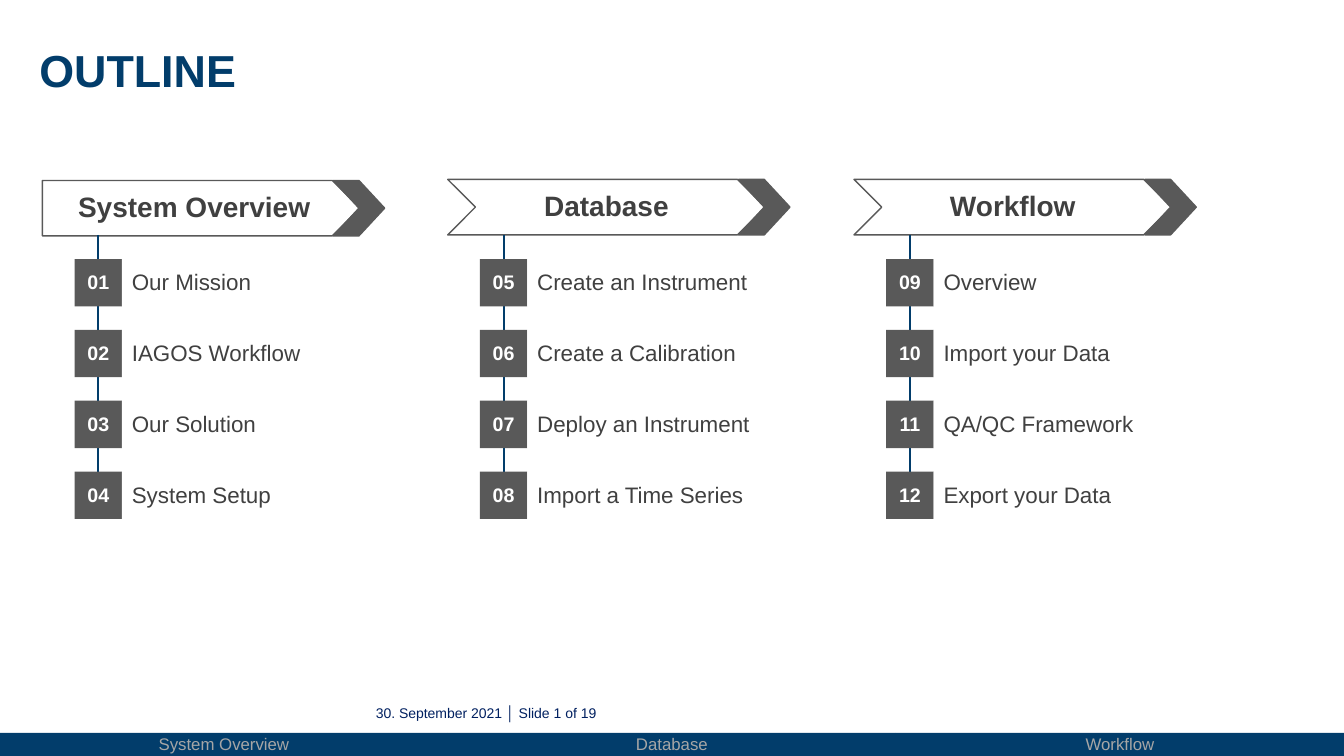
from pptx import Presentation
from pptx.dml.color import RGBColor
from pptx.enum.shapes import MSO_CONNECTOR, MSO_SHAPE as Shape
from pptx.enum.text import MSO_ANCHOR as Anchor, PP_ALIGN as Align
from pptx.oxml.ns import qn
from pptx.util import Inches, Pt

COLORS = {
    "navy": "023D6B",
    "gray": "595959",
    "text": "404040",
    "white": "FFFFFF",
    "footer": "A6A6A6",
    "date": "002060",
}


def color(name):
    return RGBColor.from_string(COLORS[name])


def add_text(left, top, width, height, text="", *, kind=None, fill=None, line=None,
             size=16, font_color="text", bold=False, align=Align.CENTER,
             anchor=Anchor.MIDDLE, spacing=0.95, margin=None):
    """Add a preset shape, or a text box when kind is None, holding one paragraph."""
    box = [Inches(n) for n in (left, top, width, height)]
    if kind is None:
        shape = slide.shapes.add_textbox(*box)
    else:
        shape = slide.shapes.add_shape(kind, *box)
        shape.shadow.inherit = False
        shape.fill.solid()
        shape.fill.fore_color.rgb = color(fill)
        if line:
            shape.line.color.rgb = color(line)
            shape.line.width = Pt(1)
        else:
            shape.line.fill.background()
    frame = shape.text_frame
    frame.word_wrap = True
    frame.vertical_anchor = anchor
    if margin is not None:
        frame.margin_left = frame.margin_right = Inches(margin)
        frame.margin_top = frame.margin_bottom = Inches(margin)
    if text:
        paragraph = frame.paragraphs[0]
        paragraph.alignment = align
        paragraph.line_spacing = spacing
        run = paragraph.add_run()
        run.text = text
        run.font.name = "Arial"
        run.font.size = Pt(size)
        run.font.bold = bold
        run.font.color.rgb = color(font_color)
    return shape


prs = Presentation()
prs.slide_width, prs.slide_height = Inches(13.33), Inches(7.5)
slide = prs.slides.add_slide(prs.slide_layouts[6])

add_text(0.39, 0.35, 3.14, 0.56, "OUTLINE", size=32, font_color="navy", bold=True,
         align=Align.LEFT, anchor=Anchor.TOP, spacing=1.14, margin=0)

# Sections: heading, heading shape, heading left and top, number left, topics
sections = [
    ("System Overview", Shape.PENTAGON, 0.42, 1.79, 0.74,
     ["Our Mission", "IAGOS Workflow", "Our Solution", "System Setup"]),
    ("Database", Shape.CHEVRON, 4.44, 1.78, 4.76,
     ["Create an Instrument", "Create a Calibration",
      "Deploy an Instrument", "Import a Time Series"]),
    ("Workflow", Shape.CHEVRON, 8.47, 1.78, 8.79,
     ["Overview", "Import your Data", "QA/QC Framework", "Export your Data"]),
]
NUMBER_SIZE = 0.47
FIRST_TOPIC_TOP, TOPIC_STEP = 2.57, 0.703
topic_number = 0

for heading, heading_kind, left, top, number_left, topics in sections:
    add_text(left, top, 3.15, 0.55, heading, kind=heading_kind, fill="white",
             line="gray", size=20, bold=True)
    add_text(left + 2.885, top, 0.51, 0.55, kind=Shape.CHEVRON, fill="gray", line="gray")

    stem_x = Inches(number_left + NUMBER_SIZE / 2)
    stem = slide.shapes.add_connector(MSO_CONNECTOR.STRAIGHT, stem_x, Inches(2.33),
                                      stem_x, Inches(4.68))
    stem.line.color.rgb = color("navy")
    stem.line.width = Pt(1.5)
    properties = stem._element.spPr
    properties.append(properties.makeelement(qn("a:effectLst"), {}))

    for row, topic in enumerate(topics):
        topic_number += 1
        topic_top = FIRST_TOPIC_TOP + row * TOPIC_STEP
        number_box = add_text(number_left, topic_top, NUMBER_SIZE, NUMBER_SIZE,
                              f"{topic_number:02}", kind=Shape.RECTANGLE, fill="gray",
                              size=14, font_color="white", bold=True)
        add_text(number_left + NUMBER_SIZE, topic_top, 2.7, NUMBER_SIZE, topic,
                 kind=Shape.RECTANGLE, fill="white", align=Align.LEFT)
    stem.end_connect(number_box, 0)

footer_width = 13.33 / len(sections)
for column, section in enumerate(sections):
    add_text(column * footer_width, 7.27, footer_width, 0.23, section[0],
             kind=Shape.RECTANGLE, fill="navy", size=12, font_color="footer")

add_text(3.54, 6.95, 2.56, 0.26, "30. September 2021 │ Slide 1 of 19", size=10,
         font_color="date", anchor=Anchor.TOP)

prs.save("out.pptx")
